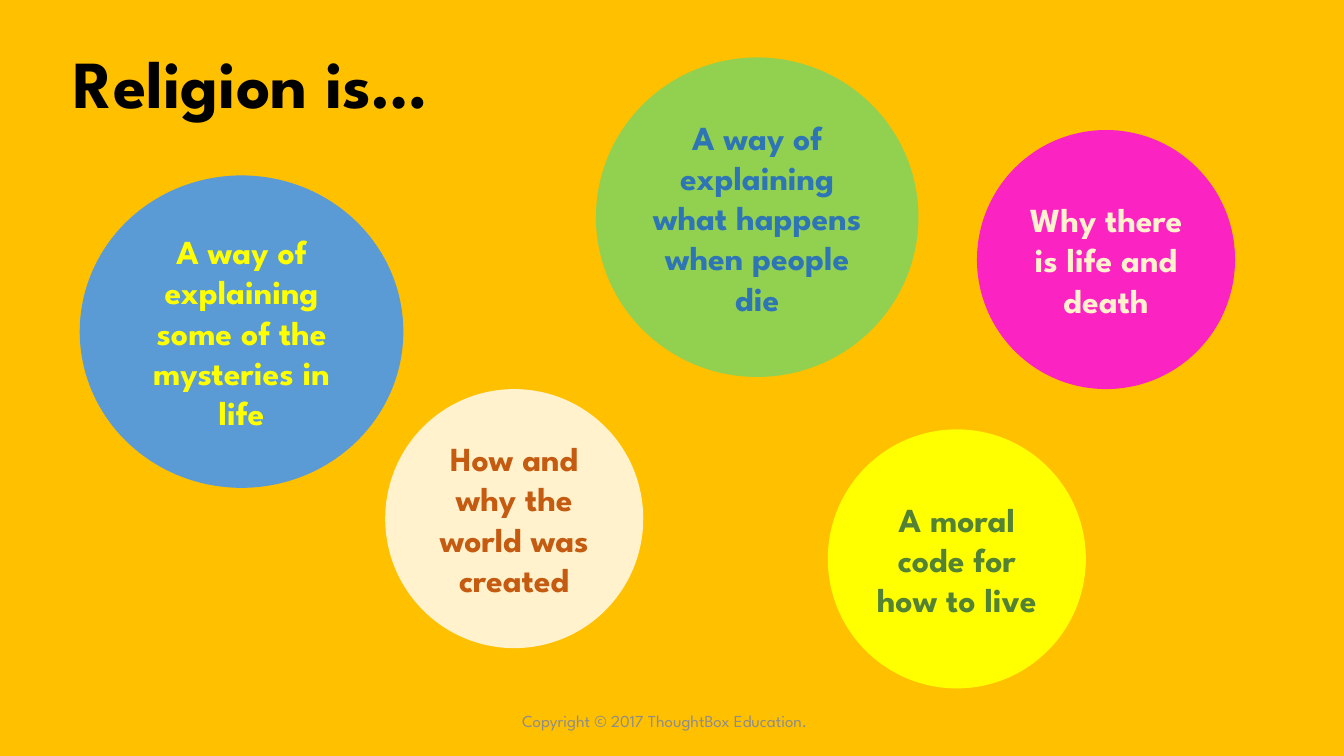
"""Build the "Religion is…" slide: a title, five idea bubbles and a footer."""

from dataclasses import dataclass

from pptx import Presentation
from pptx.dml.color import RGBColor
from pptx.enum.shapes import MSO_SHAPE
from pptx.enum.text import MSO_ANCHOR, PP_ALIGN
from pptx.shapes.autoshape import Shape
from pptx.slide import Slide
from pptx.util import Inches, Pt

SLIDE_WIDTH = Inches(13.33)
SLIDE_HEIGHT = Inches(7.5)


@dataclass(frozen=True)
class Theme:
    """Font, type sizes and colours of the slide."""

    font: str = "League Spartan"
    title_size: int = 48
    bubble_size: int = 24
    footer_size: int = 12
    background: str = "FFC000"
    black: str = "000000"
    grey: str = "8C8C8C"
    blue: str = "5B9BD5"
    dark_blue: str = "2E75B6"
    yellow: str = "FFFF00"
    cream: str = "FFF2CC"
    orange: str = "C55A11"
    light_green: str = "92D050"
    dark_green: str = "548235"
    pink: str = "FB23C2"


@dataclass(frozen=True)
class Area:
    """A rectangle in percent of the slide's width and height."""

    left: float
    top: float
    width: float
    height: float

    def lengths(self) -> tuple[int, int, int, int]:
        """Return left, top, width and height as slide lengths."""
        return (
            round(SLIDE_WIDTH * self.left / 100),
            round(SLIDE_HEIGHT * self.top / 100),
            round(SLIDE_WIDTH * self.width / 100),
            round(SLIDE_HEIGHT * self.height / 100),
        )


@dataclass(frozen=True)
class Label:
    """Wording with its type size, colour and placement."""

    text: str
    size: int
    color: str
    bold: bool = True
    align: PP_ALIGN = PP_ALIGN.CENTER
    anchor: MSO_ANCHOR = MSO_ANCHOR.MIDDLE
    line_spacing: float = 1.0


@dataclass(frozen=True)
class Bubble:
    """One idea in a filled ellipse."""

    text: str
    area: Area
    fill: str
    color: str


THEME = Theme()
SMALL_WIDTH, SMALL_HEIGHT = 19.2, 34.27

BUBBLES = [
    Bubble("A way of explaining some of the mysteries in life",
           Area(5.93, 23.2, 24.08, 41.33), THEME.blue, THEME.yellow),
    Bubble("How and why the world was created",
           Area(28.66, 51.47, SMALL_WIDTH, SMALL_HEIGHT), THEME.cream, THEME.orange),
    Bubble("A way of explaining what happens when people die",
           Area(44.34, 7.6, 24, 42.27), THEME.light_green, THEME.dark_blue),
    Bubble("A moral code for how to live",
           Area(61.59, 56.8, SMALL_WIDTH, SMALL_HEIGHT), THEME.yellow, THEME.dark_green),
    Bubble("Why there is life and death",
           Area(72.69, 17.2, SMALL_WIDTH, SMALL_HEIGHT), THEME.pink, THEME.cream),
]


def write_label(shape: Shape, label: Label) -> None:
    """Fill a shape's text frame with one styled paragraph."""
    frame = shape.text_frame
    frame.word_wrap = True
    frame.vertical_anchor = label.anchor
    para = frame.paragraphs[0]
    para.text = label.text
    para.alignment = label.align
    para.line_spacing = label.line_spacing
    para.font.name = THEME.font
    para.font.size = Pt(label.size)
    para.font.bold = label.bold
    para.font.color.rgb = RGBColor.from_string(label.color)


def add_text(page: Slide, area: Area, label: Label) -> Shape:
    """Add a text box and return it."""
    box = page.shapes.add_textbox(*area.lengths())
    write_label(box, label)
    return box


def add_bubble(page: Slide, bubble: Bubble) -> None:
    """Add a filled ellipse with centred text."""
    ellipse = page.shapes.add_shape(MSO_SHAPE.OVAL, *bubble.area.lengths())
    ellipse.shadow.inherit = False
    ellipse.fill.solid()
    ellipse.fill.fore_color.rgb = RGBColor.from_string(bubble.fill)
    ellipse.line.fill.background()
    write_label(ellipse, Label(bubble.text, THEME.bubble_size, bubble.color))


def main() -> None:
    """Build and save the deck."""
    deck = Presentation()
    deck.slide_width, deck.slide_height = SLIDE_WIDTH, SLIDE_HEIGHT
    page = deck.slides.add_slide(deck.slide_layouts[6])
    page.background.fill.solid()
    page.background.fill.fore_color.rgb = RGBColor.from_string(THEME.background)

    footer = add_text(
        page, Area(33.16, 92.67, 33.76, 5.33),
        Label("Copyright © 2017 ThoughtBox Education.",
              THEME.footer_size, THEME.grey, bold=False))
    footer.text_frame.margin_right = Inches(0.25)
    add_text(
        page, Area(4.73, 5.07, 86.27, 11.87),
        Label("Religion is…", THEME.title_size, THEME.black,
              align=PP_ALIGN.LEFT, anchor=MSO_ANCHOR.BOTTOM, line_spacing=0.9))
    for bubble in BUBBLES:
        add_bubble(page, bubble)

    deck.save("out.pptx")


if __name__ == "__main__":
    main()
